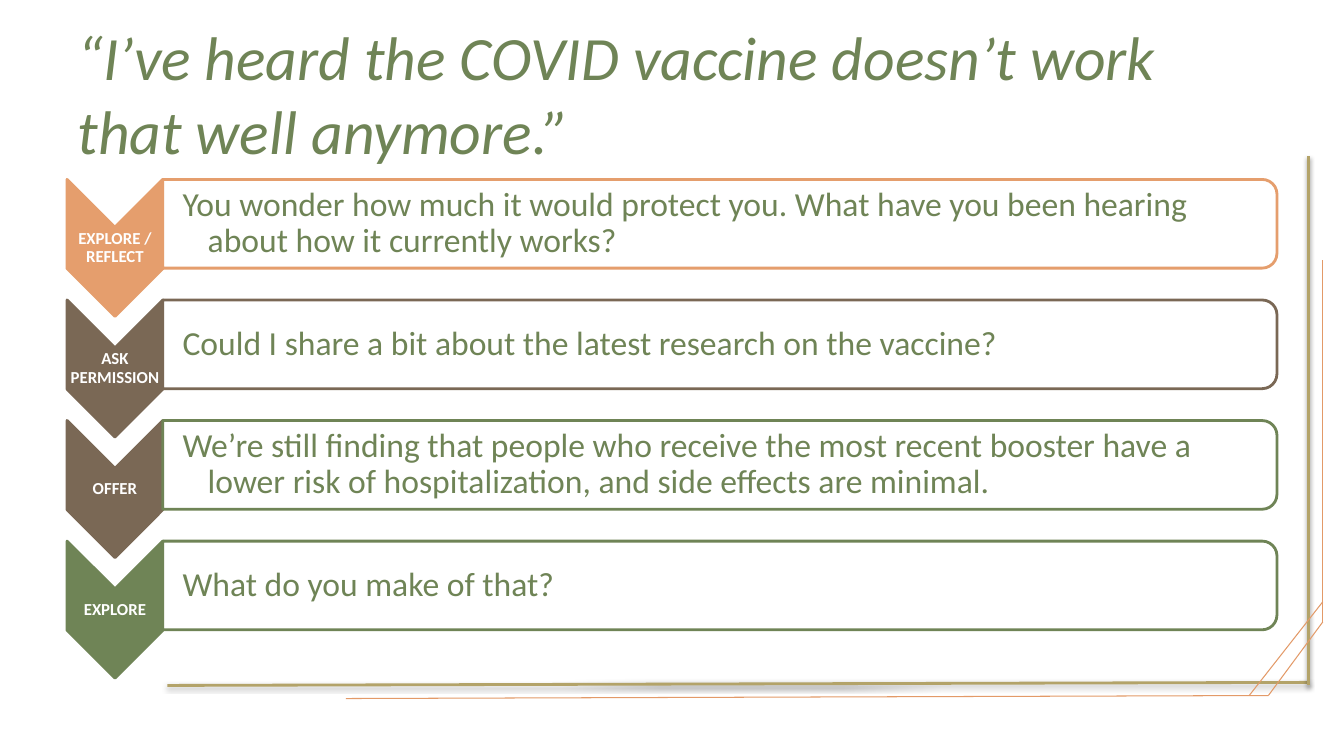
from lxml import etree
from pptx import Presentation
from pptx.dml.color import RGBColor
from pptx.enum.shapes import MSO_CONNECTOR, MSO_SHAPE
from pptx.enum.text import MSO_ANCHOR, PP_ALIGN
from pptx.oxml.ns import qn
from pptx.util import Inches, Pt

CHEVRON, CARD = MSO_SHAPE.CHEVRON, MSO_SHAPE.ROUND_2_SAME_RECTANGLE
STRAIGHT = MSO_CONNECTOR.STRAIGHT
MIDDLE = MSO_ANCHOR.MIDDLE
LEFT, CENTER = PP_ALIGN.LEFT, PP_ALIGN.CENTER

THEME = {
    "font": "Calibri",
    "green": "6F8456", "brown": "7A6855", "orange": "E59E6D",
    "gold": "B3A369", "rule": "E39A68", "white": "FFFFFF", "black": "000000",
    "title": 44, "reply": 24, "label": 12,
    "outline": 2, "hairline": 0.75,
}

TITLE = "“I’ve heard the COVID vaccine doesn’t work that well anymore.”"
STEPS = [
    ("EXPLORE / REFLECT", "orange", "orange",
     "You wonder how much it would protect you. What have you been hearing "
     "about how it currently works?"),
    ("ASK PERMISSION", "brown", "brown",
     "Could I share a bit about the latest research on the vaccine?"),
    ("OFFER", "brown", "green",
     "We’re still finding that people who receive the most recent booster have a "
     "lower risk of hospitalization, and side effects are minimal."),
    ("EXPLORE", "green", "green", "What do you make of that?"),
]
GOLD_RULES = [((1.66, 6.8), (12.98, 6.77)), ((12.98, 1.55), (12.98, 6.8))]
ORANGE_RULES = [
    ((13.12, 6.17), (12.58, 6.9)),
    ((13.12, 5.97), (12.39, 6.9)),
    ((12.58, 6.9), (3.43, 6.93)),
    ((13.12, 6.17), (13.12, 2.58)),
]

FIRST_CARD_Y, STEP_PITCH = 2.22, 1.196
CHEVRON_X, CHEVRON_DROP = 1.14, 0.24
CHEVRON_LENGTH, CHEVRON_WIDTH = 1.36, 0.95
CARD_X, CARD_LENGTH, CARD_HEIGHT = 7.14, 11.05, 0.88
LABEL_HEIGHT, REPLY_LEFT, REPLY_WIDTH, REPLY_HEIGHT = 0.41, 1.62, 11.01, 0.8


def color(key):
    return RGBColor.from_string(THEME[key])


def add_rule(slide, ends, color_key, width_key, shadow):
    (x1, y1), (x2, y2) = ends
    rule = slide.shapes.add_connector(
        STRAIGHT, Inches(x1), Inches(y1), Inches(x2), Inches(y2))
    rule.line.color.rgb = color(color_key)
    rule.line.width = Pt(THEME[width_key])
    effects = etree.SubElement(rule._element.spPr, qn("a:effectLst"))
    if shadow:
        outer = etree.SubElement(
            effects, qn("a:outerShdw"), blurRad=str(Pt(3.1)), dist=str(Pt(1.6)),
            dir="5400000", rotWithShape="0")
        tint = etree.SubElement(outer, qn("a:srgbClr"), val=THEME["black"])
        etree.SubElement(tint, qn("a:alpha"), val="38000")


def add_turned(slide, preset, center_x, center_y, width, height, fill_key, line_key):
    turned = slide.shapes.add_shape(
        preset, Inches(center_x - width / 2), Inches(center_y - height / 2),
        Inches(width), Inches(height))
    turned.rotation = 90
    turned.shadow.inherit = False
    turned.fill.solid()
    turned.fill.fore_color.rgb = color(fill_key)
    turned.line.color.rgb = color(line_key)
    turned.line.width = Pt(THEME["outline"])
    return turned


def add_text(slide, box, words, size_key, color_key, insets=(0.1, 0.05, 0.1, 0.05),
             align=LEFT, spacing=1.0, bold=False, italic=False):
    frame = slide.shapes.add_textbox(*map(Inches, box)).text_frame
    frame.word_wrap = True
    frame.vertical_anchor = MIDDLE
    (frame.margin_left, frame.margin_top,
     frame.margin_right, frame.margin_bottom) = map(Inches, insets)
    paragraph = frame.paragraphs[0]
    paragraph.alignment = align
    paragraph.line_spacing = spacing
    run = paragraph.add_run()
    run.text = words
    run.font.name = THEME["font"]
    run.font.size = Pt(THEME[size_key])
    run.font.color.rgb = color(color_key)
    run.font.bold, run.font.italic = bold, italic
    return paragraph


def add_step(slide, index, label, chevron_key, card_key, reply):
    card_y = FIRST_CARD_Y + index * STEP_PITCH
    label_y = card_y + CHEVRON_DROP
    add_turned(slide, CHEVRON, CHEVRON_X, label_y, CHEVRON_LENGTH, CHEVRON_WIDTH,
               chevron_key, chevron_key)
    add_text(slide, (CHEVRON_X - CHEVRON_WIDTH / 2, label_y - LABEL_HEIGHT / 2,
                     CHEVRON_WIDTH, LABEL_HEIGHT),
             label, "label", "white", (0.01,) * 4, CENTER, 0.9, bold=True)
    card = add_turned(slide, CARD, CARD_X, card_y, CARD_HEIGHT, CARD_LENGTH,
                      "white", card_key)
    card_fill = card._element.spPr.find(qn("a:solidFill"))
    etree.SubElement(card_fill[0], qn("a:alpha"), val="90000")
    paragraph = add_text(
        slide, (REPLY_LEFT, card_y - REPLY_HEIGHT / 2, REPLY_WIDTH, REPLY_HEIGHT),
        reply, "reply", "green", (0.19, 0.02, 0.02, 0.02), spacing=0.9)
    hanging = paragraph._p.get_or_add_pPr()
    hanging.set("marL", str(Inches(0.25)))
    hanging.set("indent", str(Inches(-0.25)))


def main():
    deck = Presentation()
    deck.slide_width, deck.slide_height = Inches(13.33), Inches(7.5)
    slide = deck.slides.add_slide(deck.slide_layouts[6])
    for ends in GOLD_RULES:
        add_rule(slide, ends, "gold", "outline", shadow=True)
    for ends in ORANGE_RULES:
        add_rule(slide, ends, "rule", "hairline", shadow=False)
    add_text(slide, (0.67, 0.3, 12, 1.25), TITLE, "title", "green", italic=True)
    for index, step in enumerate(STEPS):
        add_step(slide, index, *step)
    deck.save("out.pptx")


if __name__ == "__main__":
    main()
